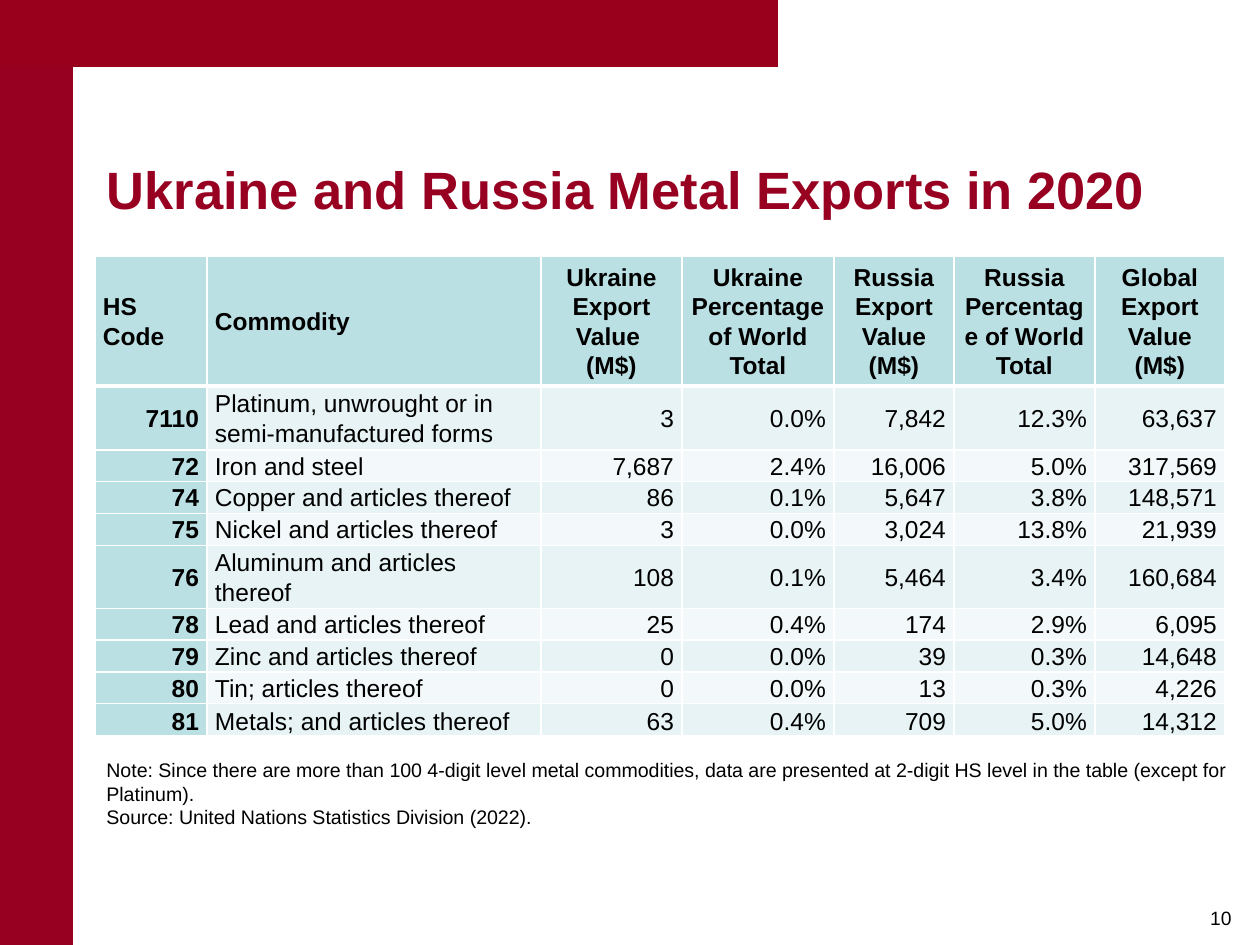
import lxml.etree
import pptx
import pptx.dml.color
import pptx.enum.shapes
import pptx.enum.text
import pptx.oxml.ns
import pptx.util

SCALE = 914400 / 126
ALIGN = pptx.enum.text.PP_ALIGN
ANCHOR = pptx.enum.text.MSO_ANCHOR
COLUMN_WIDTHS = [112, 334, 141, 152, 120, 141, 130]
ROW_HEIGHTS = [130, 64, 31, 32, 32, 59, 31, 32, 31, 32]
HEADERS = [
    "HS Code",
    "Commodity",
    "Ukraine Export Value \n(M$)",
    "Ukraine Percentage of World Total",
    "Russia Export Value (M$)",
    "Russia Percentage of World Total",
    "Global Export Value (M$)",
]
EXPORTS = [
    ["7110", "Platinum, unwrought or in semi-manufactured forms",
     "3", "0.0%", "7,842", "12.3%", "63,637"],
    ["72", "Iron and steel", "7,687", "2.4%", "16,006", "5.0%", "317,569"],
    ["74", "Copper and articles thereof", "86", "0.1%", "5,647", "3.8%", "148,571"],
    ["75", "Nickel and articles thereof", "3", "0.0%", "3,024", "13.8%", "21,939"],
    ["76", "Aluminum and articles thereof", "108", "0.1%", "5,464", "3.4%", "160,684"],
    ["78", "Lead and articles thereof", "25", "0.4%", "174", "2.9%", "6,095"],
    ["79", "Zinc and articles thereof", "0", "0.0%", "39", "0.3%", "14,648"],
    ["80", "Tin; articles thereof", "0", "0.0%", "13", "0.3%", "4,226"],
    ["81", "Metals; and articles thereof", "63", "0.4%", "709", "5.0%", "14,312"],
]
NOTES = (
    "Note: Since there are more than 100 4-digit level metal commodities, data are "
    "presented at 2-digit HS level in the table (except for Platinum).\n"
    "Source: United Nations Statistics Division (2022)."
)


def px(length):
    return pptx.util.Emu(round(length * SCALE))


def color(value):
    return pptx.dml.color.RGBColor.from_string(value)


def format_text(text_frame, size, hex_color="000000", bold=False, align=ALIGN.LEFT):
    for paragraph in text_frame.paragraphs:
        paragraph.alignment = align
        for run in paragraph.runs:
            run.font.name = "Arial"
            run.font.size = pptx.util.Pt(size)
            run.font.bold = bold
            run.font.color.rgb = color(hex_color)


def add_band(slide, width, height, fill):
    shape = slide.shapes.add_shape(
        pptx.enum.shapes.MSO_SHAPE.RECTANGLE, 0, 0, px(width), px(height))
    shape.shadow.inherit = False
    shape.fill.solid()
    shape.fill.fore_color.rgb = color(fill)
    shape.line.fill.background()


def add_title(slide, text, left, top, width, height):
    title = slide.shapes.title
    title.left, title.top = px(left), px(top)
    title.width, title.height = px(width), px(height)
    title.text_frame.text = text
    title.text_frame.vertical_anchor = ANCHOR.MIDDLE
    format_text(title.text_frame, 30, "980021", True)


def add_text(slide, text, left, top, width, height, size, align=ALIGN.LEFT):
    box = slide.shapes.add_textbox(px(left), px(top), px(width), px(height))
    box.text_frame.word_wrap = True
    box.text_frame.text = text
    format_text(box.text_frame, size, align=align)


def set_border(cell, side, points):
    properties = cell._tc.get_or_add_tcPr()
    qn = pptx.oxml.ns.qn
    line = lxml.etree.SubElement(
        properties, qn(f"a:ln{side}"), w=str(pptx.util.Pt(points)))
    fill = lxml.etree.SubElement(line, qn("a:solidFill"))
    lxml.etree.SubElement(fill, qn("a:srgbClr"), val="FFFFFF")


def cell_fill(row, column):
    if row == 0 or column == 0:
        return "BBE0E3"
    return "E7F3F4" if row % 2 else "F3F9FA"


def cell_alignment(row, column):
    if column == 1 or (row == 0 and column == 0):
        return ALIGN.LEFT
    return ALIGN.CENTER if row == 0 else ALIGN.RIGHT


def format_cell(cell, text, row, column):
    cell.text_frame.text = text
    cell.margin_left = cell.margin_right = px(8)
    cell.margin_top = cell.margin_bottom = 0
    last_row = row == len(EXPORTS)
    cell.vertical_anchor = ANCHOR.BOTTOM if last_row else ANCHOR.MIDDLE
    format_text(cell.text_frame, 14, bold=row == 0 or column == 0,
                align=cell_alignment(row, column))
    for paragraph in cell.text_frame.paragraphs:
        paragraph.line_spacing = 1.07
    borders = {"L": 1, "R": 1, "T": 3 if row == 1 else 1, "B": 3 if row == 0 else 1}
    for side, points in borders.items():
        set_border(cell, side, points)
    cell.fill.solid()
    cell.fill.fore_color.rgb = color(cell_fill(row, column))


def add_export_table(slide, left, top):
    rows = [HEADERS] + EXPORTS
    table = slide.shapes.add_table(
        len(rows), len(HEADERS), px(left), px(top),
        px(sum(COLUMN_WIDTHS)), px(sum(ROW_HEIGHTS))).table
    for column, width in zip(table.columns, COLUMN_WIDTHS):
        column.width = px(width)
    for row, height in zip(table.rows, ROW_HEIGHTS):
        row.height = px(height)
    for row, values in enumerate(rows):
        for column, text in enumerate(values):
            format_cell(table.cell(row, column), text, row, column)


def main():
    presentation = pptx.Presentation()
    presentation.slide_width = px(1260)
    presentation.slide_height = px(945)
    slide = presentation.slides.add_slide(presentation.slide_layouts[5])
    add_band(slide, 73, 945, "980021")
    add_band(slide, 778, 67, "98001C")
    add_text(slide, "10", 1190, 900, 62, 36, 11, ALIGN.CENTER)
    add_title(slide, "Ukraine and Russia Metal Exports in 2020", 94, 120, 1132, 137)
    add_export_table(slide, 95, 256)
    add_text(slide, NOTES, 94, 752, 1152, 85, 11.2)
    presentation.save("out.pptx")


if __name__ == "__main__":
    main()
